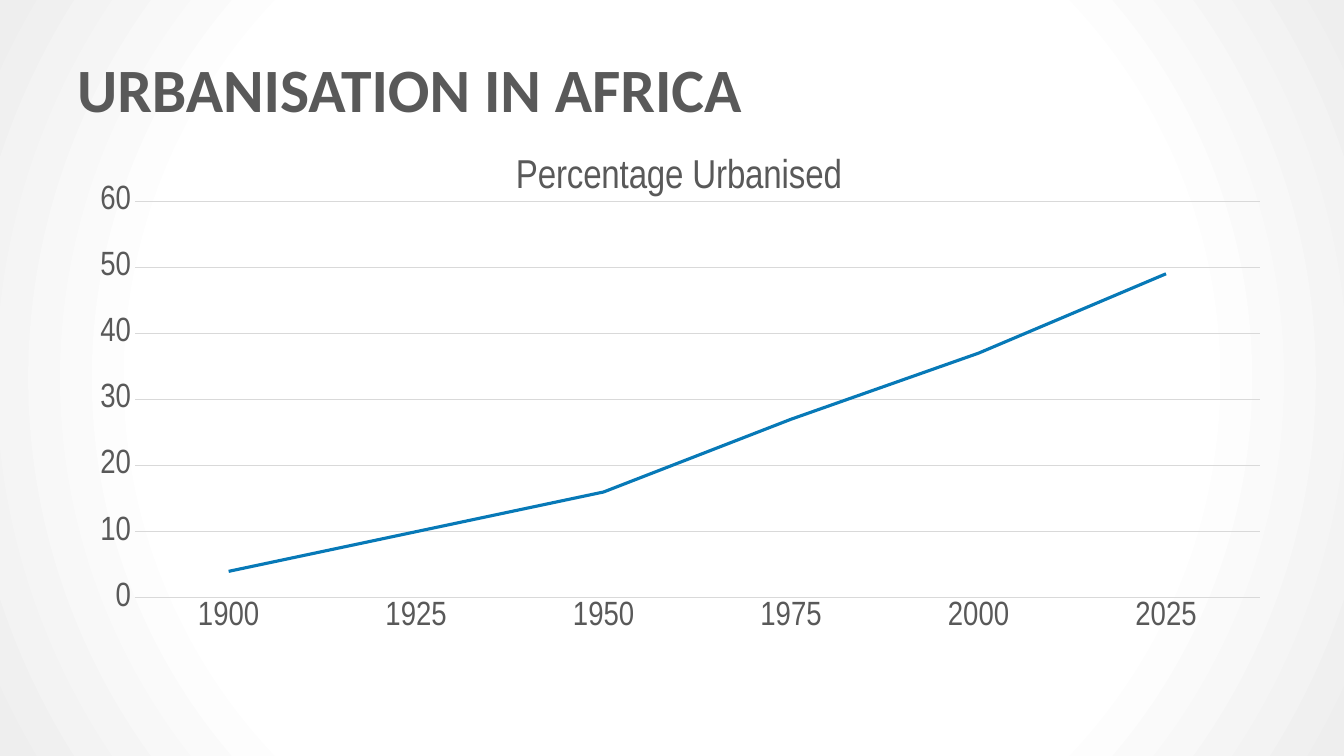
from dataclasses import dataclass

from pptx import Presentation
from pptx import util as u
from pptx.chart import data
from pptx.dml import color
from pptx.enum import chart as ch
from pptx.enum import text
from pptx.oxml import parse_xml
from pptx.oxml import ns


@dataclass(frozen=True)
class Theme:
    ink: str = "595959"
    rule: str = "D9D9D9"
    line: str = "0779B7"
    core: str = "FFFFFF"
    edge: str = "EEEEEE"
    head: str = "Calibri"
    body: str = "Arial Narrow"
    big: float = 44
    mid: float = 28.8
    small: float = 24
    thin: float = 0.75
    thick: float = 2.25


T = Theme()
WIDE, HIGH = u.Inches(13.33), u.Inches(7.5)
LEFT, SPAN = 0.05, 0.9


def rgb(code):
    return color.RGBColor.from_string(code)


def area(top, tall):
    return [int(n) for n in (WIDE * LEFT, HIGH * top, WIDE * SPAN, HIGH * tall)]


def style(font, name, size, bold=False):
    font.name, font.size, font.bold = name, u.Pt(size), bold
    font.color.rgb = rgb(T.ink)


def stroke(line, code, width):
    line.color.rgb = rgb(code)
    line.width = u.Pt(width)


def glow(slide):
    fill = slide.background.fill
    fill.gradient()
    for stop, (code, spot) in zip(fill.gradient_stops, ((T.core, 0.67), (T.edge, 1))):
        stop.color.rgb = rgb(code)
        stop.position = spot
    grad = slide.element.find(".//" + ns.qn("a:gradFill"))
    grad.replace(grad.find(ns.qn("a:lin")), parse_xml(
        f'<a:path {ns.nsdecls("a")} path="circle">'
        '<a:fillToRect l="50000" t="50000" r="50000" b="50000"/></a:path>'))


def title(slide, words, top, tall):
    frame = slide.shapes.add_textbox(*area(top, tall)).text_frame
    frame.word_wrap = True
    frame.vertical_anchor = text.MSO_ANCHOR.MIDDLE
    para = frame.paragraphs[0]
    para.text = words
    style(para.font, T.head, T.big, True)


def place(owner, spots, inner=False):
    old = owner.find(ns.qn("c:layout"))
    if old is not None:
        owner.remove(old)
    target = '<c:layoutTarget val="inner"/>' if inner else ""
    modes = "".join(f'<c:{k}Mode val="edge"/>' for k in "xy")
    sides = "".join(f'<c:{k} val="{v}"/>' for k, v in spots.items())
    node = parse_xml(f'<c:layout {ns.nsdecls("c")}><c:manualLayout>'
                     f'{target}{modes}{sides}</c:manualLayout></c:layout>')
    owner.insert(0 if inner else 1, node)


def trend(slide, words, points, top, tall):
    facts = data.CategoryChartData()
    facts.categories = list(points)
    facts.add_series(words, list(points.values()))
    chart = slide.shapes.add_chart(
        ch.XL_CHART_TYPE.LINE, *area(top, tall), facts).chart
    style(chart.font, T.body, T.small)
    chart.has_legend = False
    chart.has_title = True
    para = chart.chart_title.text_frame.paragraphs[0]
    para.text = words
    style(para.font, T.body, T.mid)
    chart.chart_title.include_in_layout = False

    plot = chart.plots[0]
    plot.vary_by_categories = False
    curve = plot.series[0]
    curve.smooth = False
    curve.marker.style = ch.XL_MARKER_STYLE.NONE
    stroke(curve.format.line, T.line, T.thick)

    base, side = chart.category_axis, chart.value_axis
    for axis in (base, side):
        axis.major_tick_mark = axis.minor_tick_mark = ch.XL_TICK_MARK.NONE
        style(axis.tick_labels.font, T.body, T.small)
    stroke(base.format.line, T.rule, T.thin)
    side.format.line.fill.background()
    side.minimum_scale, side.maximum_scale, side.major_unit = 0, 60, 10
    stroke(side.major_gridlines.format.line, T.rule, T.thin)

    root = chart.element
    place(root.find(".//" + ns.qn("c:plotArea")),
          {"x": 0.056, "y": 0.139, "w": 0.93, "h": 0.722}, True)
    place(root.find(".//" + ns.qn("c:title")), {"x": 0.365, "y": 0.04})


def main():
    deck = Presentation()
    deck.slide_width, deck.slide_height = WIDE, HIGH
    slide = deck.slides.add_slide(deck.slide_layouts[6])
    glow(slide)
    title(slide, "URBANISATION IN AFRICA", 0.064, 0.104)
    shares = {"1900": 4, "1925": 10, "1950": 16, "1975": 27, "2000": 37, "2025": 49}
    trend(slide, "Percentage Urbanised", shares, 0.165, 0.727)
    deck.save("out.pptx")


if __name__ == "__main__":
    main()
